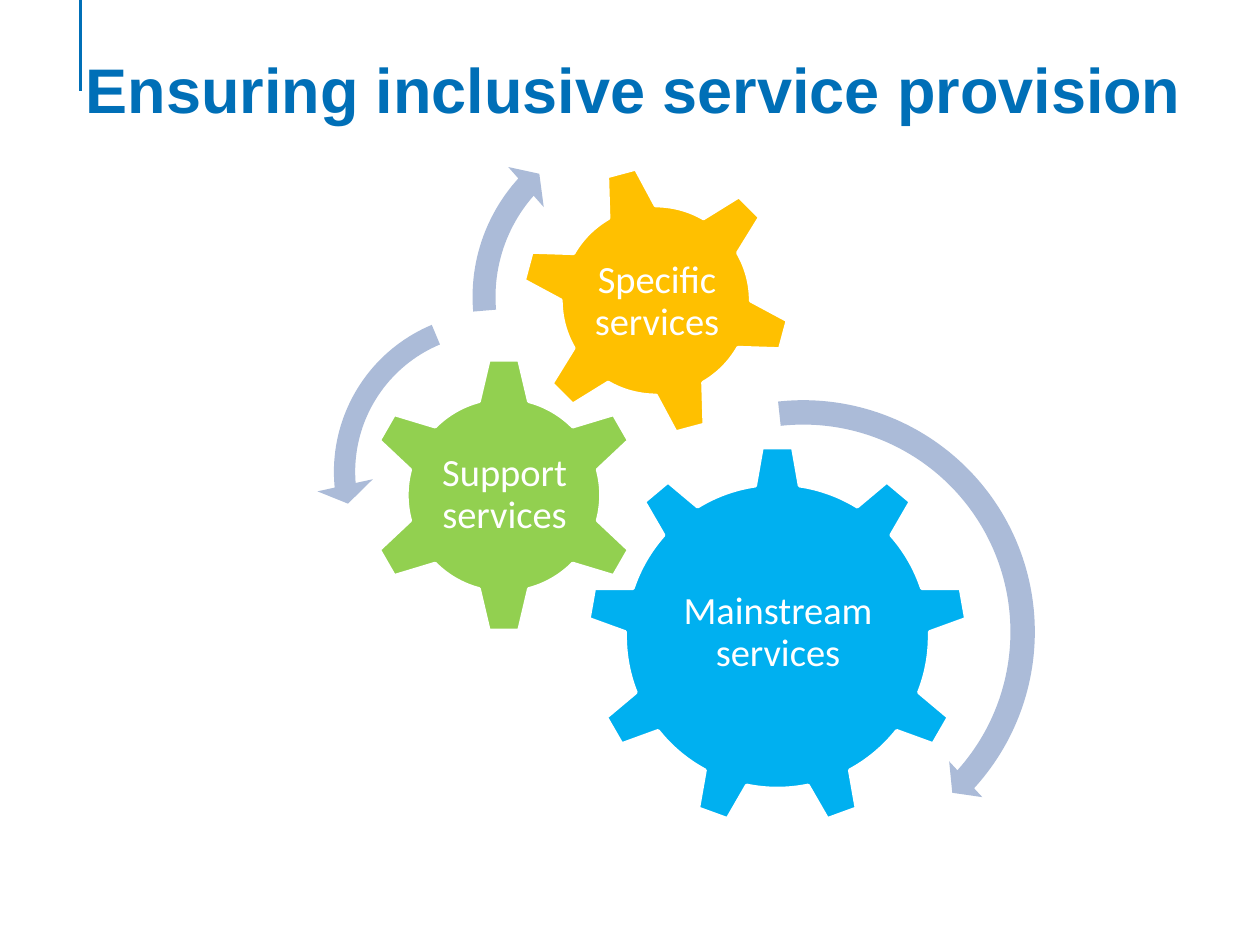
from dataclasses import dataclass

from pptx import Presentation
from pptx.dml.color import RGBColor
from pptx.enum import shapes, text
from pptx.oxml import xmlchemy
from pptx.util import Inches, Pt


@dataclass(frozen=True)
class Theme:
    title_color: str = "006FB7"
    white: str = "FFFFFF"
    mainstream: str = "00B0F0"
    support: str = "92D050"
    specific: str = "FFC000"
    arrow: str = "ABBBD8"
    title_font: str = "Arial"
    label_font: str = "Calibri"
    title_size: int = 36
    label_size: int = 22
    line_width: int = 2


THEME = Theme()
KIND = shapes.MSO_SHAPE


def rgb(value):
    return RGBColor.from_string(value)


def add_text(slide, wording, box, font_name, size, color, inset, bold=False):
    frame = slide.shapes.add_textbox(*map(Inches, box)).text_frame
    frame.word_wrap = True
    frame.margin_left = frame.margin_right = Inches(inset)
    frame.margin_top = frame.margin_bottom = Inches(inset)
    frame.text = wording
    paragraph = frame.paragraphs[0]
    paragraph.alignment = text.PP_ALIGN.CENTER
    font = paragraph.runs[0].font
    font.name, font.size, font.bold = font_name, Pt(size), bold
    font.color.rgb = rgb(color)
    return frame


def add_rule(slide, x, bottom):
    """Vertical accent line from the top edge of the slide."""
    rule = slide.shapes.add_connector(
        shapes.MSO_CONNECTOR.STRAIGHT, Inches(x), 0, Inches(x), Inches(bottom))
    rule.line.color.rgb = rgb(THEME.title_color)
    rule.line.width = Pt(THEME.line_width)
    properties = rule._element.spPr
    properties.append(xmlchemy.OxmlElement("a:effectLst"))


def add_square_shape(slide, kind, left, top, size, color):
    shape = slide.shapes.add_shape(
        kind, Inches(left), Inches(top), Inches(size), Inches(size))
    shape.shadow.inherit = False
    shape.fill.solid()
    shape.fill.fore_color.rgb = rgb(color)
    return shape


def add_gear(slide, wording, kind, place, color, label_box, rotation=0):
    gear = add_square_shape(slide, kind, *place, color)
    gear.rotation = rotation
    gear.line.color.rgb = rgb(THEME.white)
    gear.line.width = Pt(THEME.line_width)
    label = add_text(slide, wording, label_box, THEME.label_font,
                     THEME.label_size, THEME.white, 0.03)
    label.vertical_anchor = text.MSO_ANCHOR.MIDDLE
    label.paragraphs[0].line_spacing = 0.9


def add_turn_arrow(slide, kind, place, adjustments):
    arrow = add_square_shape(slide, kind, *place, THEME.arrow)
    arrow.line.fill.background()
    for index, value in enumerate(adjustments):
        arrow.adjustments[index] = value


def main():
    deck = Presentation()
    deck.slide_width, deck.slide_height = Inches(10), Inches(7.5)
    slide = deck.slides.add_slide(deck.slide_layouts[6])

    add_rule(slide, 0.64, 0.72)
    add_text(slide, "Ensuring inclusive service provision",
             (0.48, 0.3, 9.1, 1.19), THEME.title_font, THEME.title_size,
             THEME.title_color, 0.1, bold=True)

    add_gear(slide, "Mainstream services", KIND.GEAR_9, (4.66, 3.54, 3.02),
             THEME.mainstream, (5.27, 4.25, 1.81, 1.55))
    add_gear(slide, "Support services", KIND.GEAR_6, (2.9, 2.83, 2.2),
             THEME.support, (3.46, 3.39, 1.09, 1.08))
    add_gear(slide, "Specific services", KIND.GEAR_6, (4.13, 1.31, 2.15),
             THEME.specific, (4.61, 1.79, 1.21, 1.21), rotation=345)

    add_turn_arrow(slide, KIND.CIRCULAR_ARROW, (4.44, 3.08, 3.87),
                   (0.05, 2.99, 25.33, 158.26, 0.05))
    add_turn_arrow(slide, KIND.LEFT_CIRCULAR_ARROW, (2.51, 2.34, 2.81),
                   (0.06, 4.3, 104.89, 148.38, 0.08))
    add_turn_arrow(slide, KIND.CIRCULAR_ARROW, (3.63, 0.84, 3.03),
                   (0.06, 3.94, 133.14, 105.08, 0.07))

    deck.save("out.pptx")


if __name__ == "__main__":
    main()
